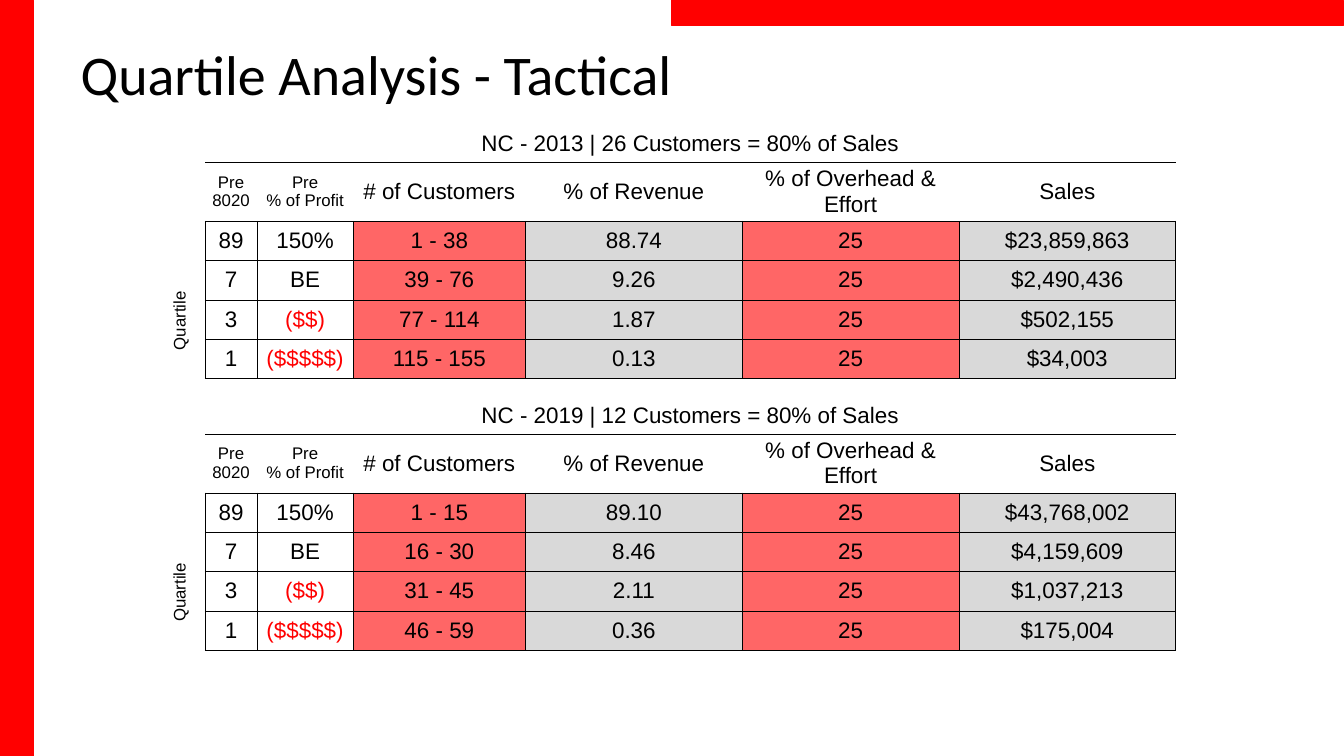
from lxml import etree
from pptx import Presentation
from pptx.dml.color import RGBColor
from pptx.enum.shapes import MSO_SHAPE
from pptx.enum.text import MSO_ANCHOR, PP_ALIGN
from pptx.oxml.ns import qn
from pptx.util import Inches, Pt

RECTANGLE = MSO_SHAPE.RECTANGLE
MIDDLE = MSO_ANCHOR.MIDDLE
LEFT, CENTER = PP_ALIGN.LEFT, PP_ALIGN.CENTER

TITLE = "Quartile Analysis - Tactical"
SIDE_LABEL = "Quartile"
HEADERS = ["Pre 8020", "Pre\n% of Profit", "# of Customers", "% of Revenue",
           "% of Overhead & Effort", "Sales"]
QUARTILES = [("89", "150%"), ("7", "BE"), ("3", "($$)"), ("1", "($$$$$)")]
EFFORT = "25"
YEARS = [
    {"caption": "NC - 2013 | 26 Customers = 80% of Sales", "top": 2.49,
     "rows": [("1 - 38", "88.74", "$23,859,863"),
              ("39 - 76", "9.26", "$2,490,436"),
              ("77 - 114", "1.87", "$502,155"),
              ("115 - 155", "0.13", "$34,003")]},
    {"caption": "NC - 2019 | 12 Customers = 80% of Sales", "top": 7.88,
     "rows": [("1 - 15", "89.10", "$43,768,002"),
              ("16 - 30", "8.46", "$4,159,609"),
              ("31 - 45", "2.11", "$1,037,213"),
              ("46 - 59", "0.36", "$175,004")]},
]

BLACK, RED, ROSE, GREY = "000000", "FF0000", "FF6666", "D9D9D9"
BARS = [(0, 0, 0.67, 15), (13.33, 0, 13.33, 0.5)]
TABLE_LEFT = 3.33
COLUMN_WIDTHS = [0.74, 1.03, 1.91, 3.42, 4.3, 4.3, 4.3]
ROW_HEIGHTS = [0.73, 1.17] + [0.78] * 4
COLUMN_FILLS = [None, None, None, ROSE, GREY, ROSE, GREY]
LARGE = {"name": "Arial", "size": Pt(32)}
SMALL = {"name": "Arial", "size": Pt(24)}
HEADING = {"name": "Calibri", "size": Pt(80), "bold": False}


def color(value):
    return RGBColor.from_string(value)


def write(frame, text, style, ink=BLACK, align=CENTER):
    frame.text = text
    for para in frame.paragraphs:
        para.alignment = align
        for name, value in style.items():
            setattr(para.font, name, value)
        para.font.color.rgb = color(ink)


def set_borders(cell, edges):
    properties = cell._tc.get_or_add_tcPr()
    for edge in "LRTB":
        line = etree.SubElement(properties, qn(f"a:ln{edge}"), w=str(Pt(1)))
        if edge in edges:
            fill = etree.SubElement(line, qn("a:solidFill"))
            etree.SubElement(fill, qn("a:srgbClr"), val=BLACK)
        else:
            etree.SubElement(line, qn("a:noFill"))


def edges_at(row, column):
    if column == 0:
        return ""
    return {0: "B", 1: "TB"}.get(row, "LRTB")


def add_bar(page, box):
    bar = page.shapes.add_shape(RECTANGLE, *map(Inches, box))
    bar.shadow.inherit = False
    bar.fill.solid()
    bar.fill.fore_color.rgb = color(RED)
    bar.line.color.rgb = color(RED)
    bar.line.width = Pt(0.75)


def add_quartile_table(page, year):
    frame = page.shapes.add_table(
        len(ROW_HEIGHTS), len(COLUMN_WIDTHS), Inches(TABLE_LEFT), Inches(year["top"]),
        Inches(sum(COLUMN_WIDTHS)), Inches(sum(ROW_HEIGHTS)))
    table = frame.table
    table.first_row = table.horz_banding = False
    for column, width in zip(table.columns, COLUMN_WIDTHS):
        column.width = Inches(width)
    for row, height in zip(table.rows, ROW_HEIGHTS):
        row.height = Inches(height)

    body = [(share, profit, customers, revenue, EFFORT, sales)
            for (share, profit), (customers, revenue, sales) in zip(QUARTILES, year["rows"])]
    for row in range(len(ROW_HEIGHTS)):
        for column, shade in enumerate(COLUMN_FILLS):
            cell = table.cell(row, column)
            set_borders(cell, edges_at(row, column))
            cell.vertical_anchor = MIDDLE
            if row > 1 and shade:
                cell.fill.solid()
                cell.fill.fore_color.rgb = color(shade)
            else:
                cell.fill.background()
            if row and column:
                text = ([HEADERS] + body)[row - 1][column - 1]
                style = SMALL if row == 1 and column < 3 else LARGE
                ink = RED if text.startswith("($") else BLACK
                write(cell.text_frame, text, style, ink)

    caption = table.cell(0, 1)
    caption.merge(table.cell(0, len(COLUMN_WIDTHS) - 1))
    write(caption.text_frame, year["caption"], LARGE)
    side = table.cell(1, 0)
    side.merge(table.cell(len(ROW_HEIGHTS) - 1, 0))
    write(side.text_frame, SIDE_LABEL, SMALL, align=LEFT)
    side._tc.get_or_add_tcPr().set("vert", "vert270")
    indent = side.text_frame.paragraphs[0]._p.get_or_add_pPr()
    indent.set("marL", str(Inches(0.46)))
    indent.set("indent", "0")


def main():
    deck = Presentation()
    deck.slide_width, deck.slide_height = Inches(26.67), Inches(15)
    page = deck.slides.add_slide(deck.slide_layouts[5])
    for box in BARS:
        add_bar(page, box)
    title = page.shapes.title
    title.left, title.top, title.width, title.height = map(Inches, (1.5, 0.8, 24, 1.3))
    title.text_frame.vertical_anchor = MIDDLE
    write(title.text_frame, TITLE, HEADING, align=LEFT)
    for year in YEARS:
        add_quartile_table(page, year)
    deck.save("out.pptx")


if __name__ == "__main__":
    main()
